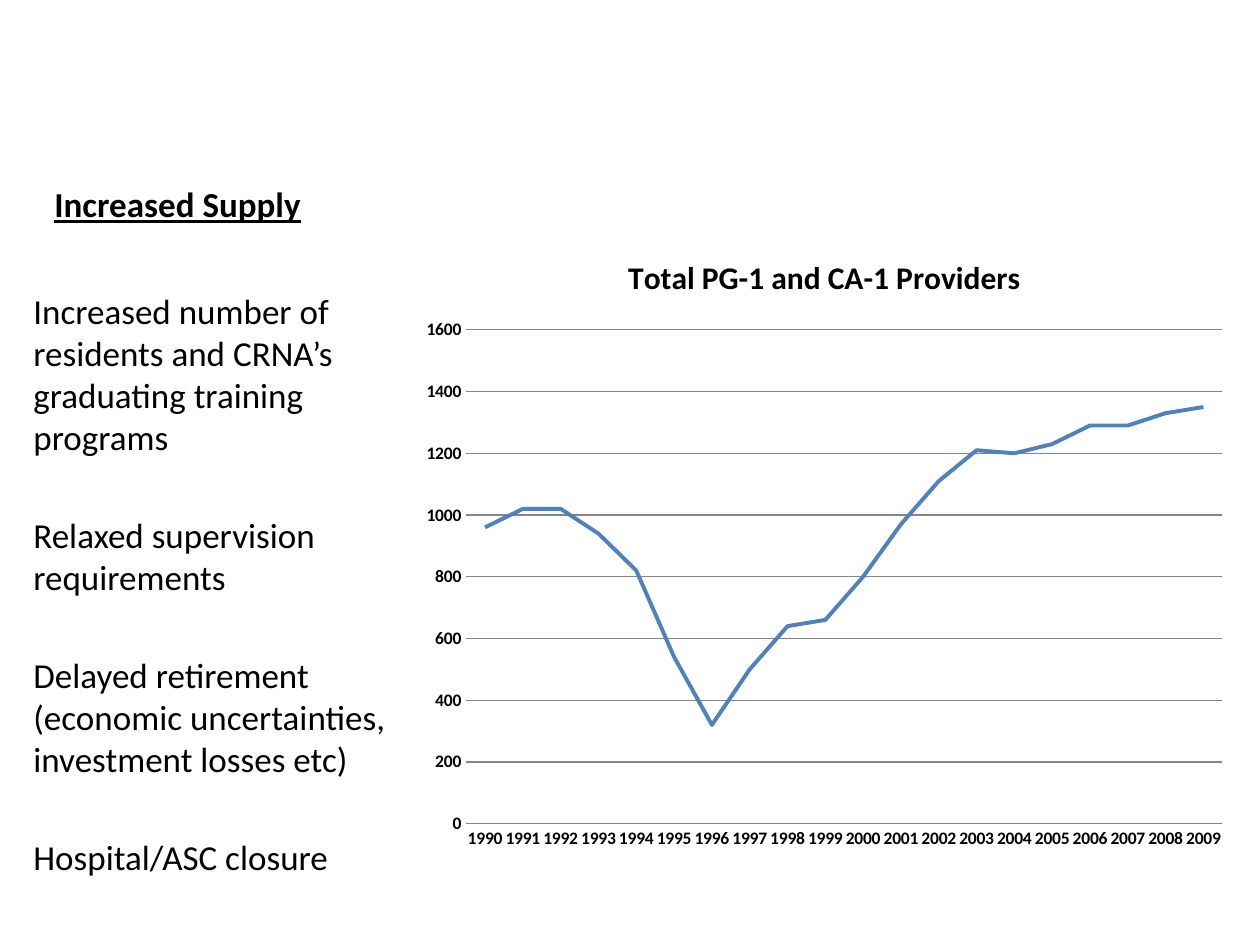
from pptx import Presentation
from pptx.chart.data import CategoryChartData
from pptx.dml.color import RGBColor
from pptx.enum.chart import XL_CHART_TYPE, XL_MARKER_STYLE, XL_TICK_MARK
from pptx.enum.text import MSO_ANCHOR
from pptx.util import Emu, Pt

LINE = XL_CHART_TYPE.LINE
NO_MARK = XL_MARKER_STYLE.NONE
NO_TICK = XL_TICK_MARK.NONE
TOP, BOTTOM = MSO_ANCHOR.TOP, MSO_ANCHOR.BOTTOM

BLACK = RGBColor(0x00, 0x00, 0x00)
BLUE = RGBColor(0x4F, 0x81, 0xBD)
GRAY = RGBColor(0x86, 0x86, 0x86)
FACE = "Calibri"
SCALE = 914400 // 126

REASONS = [
    "Increased number of residents and CRNA’s graduating training programs",
    "Relaxed supervision requirements",
    "Delayed retirement (economic uncertainties, investment losses etc)",
    "Hospital/ASC closure",
]
FIRST_YEAR = 1990
COUNTS = [960, 1020, 1020, 940, 820, 540, 320, 500, 640, 660,
          800, 970, 1110, 1210, 1200, 1230, 1290, 1290, 1330, 1350]


def px(n):
    return Emu(n * SCALE)


def style(font, size, bold=False):
    font.name = FACE
    font.size = Pt(size)
    font.bold = bold
    font.color.rgb = BLACK


def add_text(slide, box, lines, anchor=TOP, bold=False, gap=0):
    """Add a text box with one paragraph a line, gap points apart."""
    frame = slide.shapes.add_textbox(*map(px, box)).text_frame
    frame.word_wrap = True
    frame.vertical_anchor = anchor
    frame.text = "\n".join(lines)
    for i, para in enumerate(frame.paragraphs):
        style(para.font, 20, bold)
        para.font.underline = bold
        para.space_before = Pt(gap if i else 0)


def style_axis(axis):
    axis.major_tick_mark = NO_TICK
    axis.minor_tick_mark = NO_TICK
    style(axis.tick_labels.font, 10, True)


def add_trend(slide, box):
    """Add the line chart of providers by year."""
    data = CategoryChartData()
    data.categories = [str(FIRST_YEAR + i) for i in range(len(COUNTS))]
    data.add_series("Series 1", COUNTS)
    chart = slide.shapes.add_chart(LINE, *map(px, box), data).chart
    style(chart.font, 10)
    chart.has_legend = False

    chart.has_title = True
    chart.chart_title.include_in_layout = False
    title = chart.chart_title.text_frame
    title.text = "Total PG-1 and CA-1 Providers"
    style(title.paragraphs[0].font, 18, True)

    years, counts = chart.category_axis, chart.value_axis
    style_axis(years)
    years.format.line.color.rgb = GRAY
    style_axis(counts)
    counts.minimum_scale, counts.maximum_scale = 0, 1600
    counts.major_unit = 200
    counts.tick_labels.number_format = "0"
    counts.tick_labels.number_format_is_linked = False
    counts.format.line.fill.background()
    counts.major_gridlines.format.line.color.rgb = GRAY

    plot = chart.plots[0]
    plot.vary_by_categories = False
    series = plot.series[0]
    series.smooth = False
    series.marker.style = NO_MARK
    series.format.line.color.rgb = BLUE
    series.format.line.width = Pt(2.25)


def main():
    deck = Presentation()
    deck.slide_width, deck.slide_height = px(1260), px(945)
    slide = deck.slides.add_slide(deck.slide_layouts[6])
    add_text(slide, (42, 71, 368, 160), ["Increased Supply"], BOTTOM, True)
    add_text(slide, (21, 283, 410, 578), REASONS, gap=32)
    add_trend(slide, (410, 231, 829, 630))
    deck.save("out.pptx")


if __name__ == "__main__":
    main()
